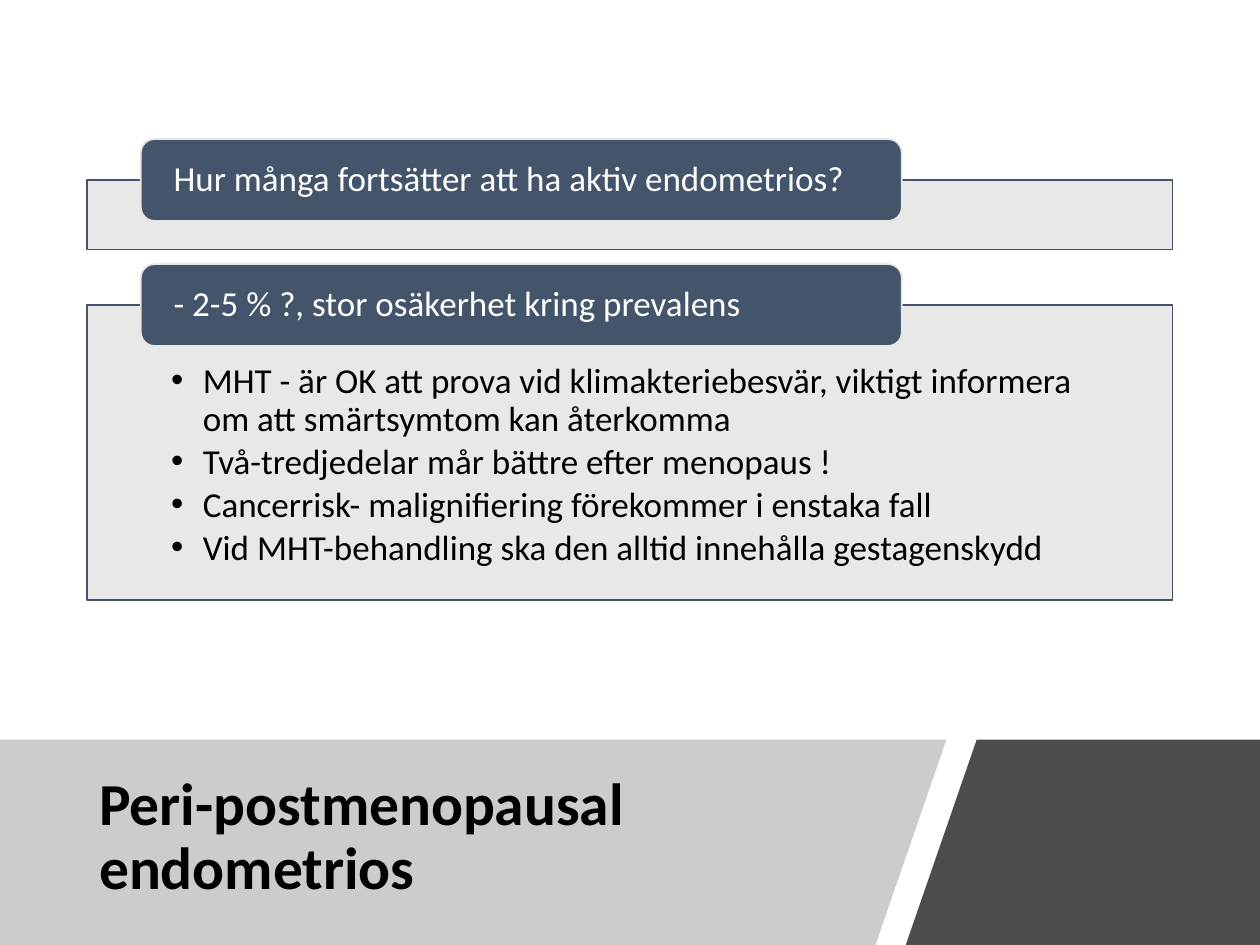
from dataclasses import dataclass

from lxml.etree import SubElement
from pptx import Presentation
from pptx.dml.color import RGBColor
from pptx.enum.shapes import MSO_SHAPE
from pptx.enum.text import MSO_ANCHOR, PP_ALIGN
from pptx.oxml.ns import qn
from pptx.shapes.autoshape import Shape
from pptx.slide import Slide
from pptx.text.text import TextFrame
from pptx.util import Cm, Pt

COLOURS = {
    "grey": "808080",
    "black": "000000",
    "white": "FFFFFF",
    "pale": "E7E6E6",
    "slate": "44546A",
}
FONT = "Calibri"
PAGE_WIDTH, PAGE_HEIGHT = 25.4, 19.05
BAND_TOP = 14.91
PANEL_LEFT, PANEL_WIDTH = 1.75, 21.89
TAB_LEFT, TAB_WIDTH, TAB_HEIGHT = 2.84, 15.34, 1.65


@dataclass
class Section:
    heading: str
    top: float
    height: float
    points: tuple[str, ...] = ()


@dataclass
class Band:
    corners: list[tuple[float, float]]
    colour: str
    opacity: int


SECTIONS = [
    Section("Hur många fortsätter att ha aktiv endometrios?", 3.63, 1.4),
    Section(
        "- 2-5 % ?, stor osäkerhet kring prevalens",
        6.15,
        5.94,
        (
            "MHT - är OK att prova vid klimakteriebesvär, viktigt informera "
            "om att smärtsymtom kan återkomma",
            "Två-tredjedelar mår bättre efter menopaus !",
            "Cancerrisk- malignifiering förekommer i enstaka fall",
            "Vid MHT-behandling ska den alltid innehålla gestagenskydd",
        ),
    ),
]
BANDS = [
    Band(
        [(0, BAND_TOP), (19.08, BAND_TOP), (17.65, PAGE_HEIGHT), (0, PAGE_HEIGHT)],
        "grey",
        40,
    ),
    Band(
        [
            (19.69, BAND_TOP),
            (PAGE_WIDTH, BAND_TOP),
            (PAGE_WIDTH, PAGE_HEIGHT),
            (18.26, PAGE_HEIGHT),
        ],
        "black",
        70,
    ),
]


def paint(shape: Shape, fill: str, opacity: int = 100, line: str | None = None) -> None:
    shape.shadow.inherit = False
    shape.fill.solid()
    shape.fill.fore_color.rgb = RGBColor.from_string(COLOURS[fill])
    if opacity < 100:
        colour = shape.fill._xPr.find(qn("a:solidFill"))[0]
        SubElement(colour, qn("a:alpha"), val=str(opacity * 1000))
    if line:
        shape.line.color.rgb = RGBColor.from_string(COLOURS[line])
        shape.line.width = Pt(1)
    else:
        shape.line.fill.background()


def set_frame(
    frame: TextFrame,
    anchor: MSO_ANCHOR,
    insets: tuple[float, float, float, float] = (0.25, 0.13, 0.25, 0.13),
) -> None:
    frame.word_wrap = True
    frame.vertical_anchor = anchor
    frame.margin_left, frame.margin_top, frame.margin_right, frame.margin_bottom = map(
        Cm, insets
    )


def write(
    frame: TextFrame,
    text: str,
    *,
    size: int = 20,
    colour: str = "black",
    bold: bool = False,
    space_after: int = 0,
    bullet: bool = False,
) -> None:
    para = frame.paragraphs[0] if not frame.text else frame.add_paragraph()
    para.alignment = PP_ALIGN.LEFT
    para.line_spacing = 0.9
    para.space_after = Pt(space_after)
    if bullet:
        properties = para._p.get_or_add_pPr()
        indent = Cm(0.64)
        properties.set("marL", str(indent))
        properties.set("indent", str(-indent))
        SubElement(properties, qn("a:buFont"), typeface="Arial")
        SubElement(properties, qn("a:buChar"), char="•")
    span = para.add_run()
    span.text = text
    span.font.name = FONT
    span.font.size = Pt(size)
    span.font.bold = bold
    span.font.color.rgb = RGBColor.from_string(COLOURS[colour])


def draw_band(page: Slide, band: Band) -> None:
    start, *others = [(Cm(x), Cm(y)) for x, y in band.corners]
    builder = page.shapes.build_freeform(*start)
    builder.add_line_segments(others, close=True)
    paint(builder.convert_to_shape(), band.colour, band.opacity)


def draw_title(page: Slide, text: str) -> None:
    box = page.shapes.add_textbox(Cm(1.75), Cm(15.37), Cm(16.08), Cm(3.05))
    set_frame(box.text_frame, MSO_ANCHOR.MIDDLE)
    write(box.text_frame, text, size=34, bold=True)


def draw_section(page: Slide, section: Section) -> None:
    panel = page.shapes.add_shape(
        MSO_SHAPE.RECTANGLE,
        Cm(PANEL_LEFT),
        Cm(section.top),
        Cm(PANEL_WIDTH),
        Cm(section.height),
    )
    paint(panel, "pale", 90, "slate")
    set_frame(panel.text_frame, MSO_ANCHOR.TOP, (1.7, 1.17, 1.7, 0.41))
    for point in section.points:
        write(panel.text_frame, point, space_after=3, bullet=True)

    tab = page.shapes.add_shape(
        MSO_SHAPE.ROUNDED_RECTANGLE,
        Cm(TAB_LEFT),
        Cm(section.top - TAB_HEIGHT / 2),
        Cm(TAB_WIDTH),
        Cm(TAB_HEIGHT),
    )
    paint(tab, "slate", line="pale")
    set_frame(tab.text_frame, MSO_ANCHOR.MIDDLE, (0.58, 0, 0.58, 0))
    write(tab.text_frame, section.heading, colour="white")


def main() -> None:
    deck = Presentation()
    deck.slide_width, deck.slide_height = Cm(PAGE_WIDTH), Cm(PAGE_HEIGHT)
    page = deck.slides.add_slide(deck.slide_layouts[6])
    for band in BANDS:
        draw_band(page, band)
    draw_title(page, "Peri-postmenopausal endometrios")
    for section in SECTIONS:
        draw_section(page, section)
    deck.save("out.pptx")


if __name__ == "__main__":
    main()
